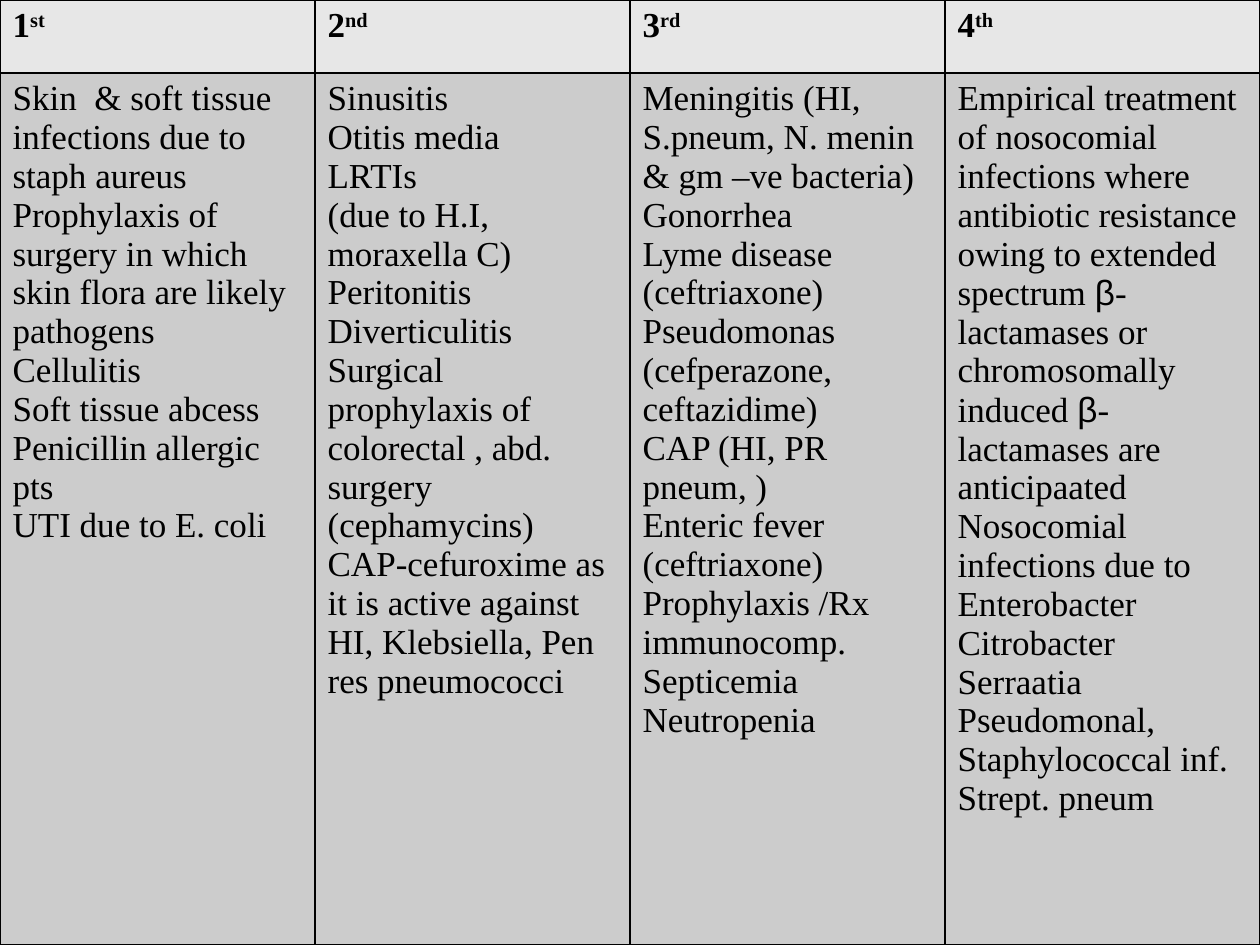
from dataclasses import dataclass

from lxml import etree
from pptx import Presentation
from pptx import util as u
from pptx.dml.color import RGBColor
from pptx.oxml import ns


@dataclass(frozen=True)
class Theme:
    """Colours, fonts and sizes of the slide."""
    ink: str = "000000"
    head: str = "E7E7E7"
    body: str = "CCCCCC"
    font: str = "Times New Roman"
    greek: str = "Arial"
    size: int = 20
    border: int = 1
    raised: int = 30000


T = Theme()
HEAD_SHARE = 0.58 / 7.5

GENERATIONS = [
    ("1", "st", [
        "Skin  & soft tissue infections due to staph aureus",
        "Prophylaxis of surgery in which skin flora are likely pathogens",
        "Cellulitis",
        "Soft tissue abcess",
        "Penicillin allergic pts",
        "UTI due to E. coli",
    ]),
    ("2", "nd", [
        "Sinusitis",
        "Otitis media",
        "LRTIs",
        "(due to H.I, moraxella C)",
        "Peritonitis",
        "Diverticulitis",
        "Surgical prophylaxis of colorectal , abd. surgery (cephamycins)",
        "CAP-cefuroxime as it is active against HI, Klebsiella, Pen res pneumococci",
    ]),
    ("3", "rd", [
        "Meningitis (HI, S.pneum, N. menin & gm –ve bacteria)",
        "Gonorrhea",
        "Lyme disease",
        "(ceftriaxone)",
        "Pseudomonas (cefperazone, ceftazidime)",
        "CAP (HI, PR pneum, )",
        "Enteric fever (ceftriaxone)",
        "Prophylaxis /Rx immunocomp.",
        "Septicemia",
        "Neutropenia",
    ]),
    ("4", "th", [
        "Empirical treatment of nosocomial infections where antibiotic resistance "
        "owing to extended spectrum β-lactamases or chromosomally induced "
        "β-lactamases are anticipaated",
        "Nosocomial infections due to Enterobacter",
        "Citrobacter",
        "Serraatia",
        "Pseudomonal,",
        "Staphylococcal inf.",
        "Strept. pneum",
    ]),
]


def add_text(p, text, font=T.font, bold=False, baseline=0):
    """Add one formatted run to a paragraph."""
    r = p.add_run()
    r.text = text
    r.font.name, r.font.size, r.font.bold = font, u.Pt(T.size), bold
    r.font.color.rgb = RGBColor.from_string(T.ink)
    if baseline:
        r._r.get_or_add_rPr().set("baseline", str(baseline))


def style_cell(cell, fill):
    """Give a cell its four borders and its fill."""
    tcPr = cell._tc.get_or_add_tcPr()
    for side in ("lnL", "lnR", "lnT", "lnB"):
        ln = etree.SubElement(tcPr, ns.qn(f"a:{side}"), w=str(u.Pt(T.border)))
        line = etree.SubElement(ln, ns.qn("a:solidFill"))
        etree.SubElement(line, ns.qn("a:srgbClr"), val=T.ink)
    cell.fill.solid()
    cell.fill.fore_color.rgb = RGBColor.from_string(fill)


def fill_heading(cell, number, suffix):
    """Write an ordinal with a raised suffix."""
    style_cell(cell, T.head)
    p = cell.text_frame.paragraphs[0]
    add_text(p, number, bold=True)
    add_text(p, suffix, bold=True, baseline=T.raised)


def fill_uses(cell, uses):
    """Write one paragraph per use, with Greek letters in their own font."""
    style_cell(cell, T.body)
    tf = cell.text_frame
    for i, use in enumerate(uses):
        p = tf.add_paragraph() if i else tf.paragraphs[0]
        for j, part in enumerate(use.split("β")):
            if j:
                add_text(p, "β", font=T.greek)
            add_text(p, part)


def add_generations(s, left, top, width, height):
    """Place the table of generations in the given box."""
    count = len(GENERATIONS)
    table = s.shapes.add_table(2, count, left, top, width, height).table
    table.rows[0].height = int(height * HEAD_SHARE)
    table.rows[1].height = height - table.rows[0].height
    for col, (number, suffix, uses) in enumerate(GENERATIONS):
        table.columns[col].width = width // count
        fill_heading(table.cell(0, col), number, suffix)
        fill_uses(table.cell(1, col), uses)


def main():
    """Build and save the slide."""
    prs = Presentation()
    prs.slide_width, prs.slide_height = u.Inches(10), u.Inches(7.5)
    s = prs.slides.add_slide(prs.slide_layouts[6])
    s.background.fill.solid()
    s.background.fill.fore_color.rgb = RGBColor.from_string(T.ink)
    add_generations(s, 0, 0, prs.slide_width, prs.slide_height)
    prs.save("out.pptx")


if __name__ == "__main__":
    main()
